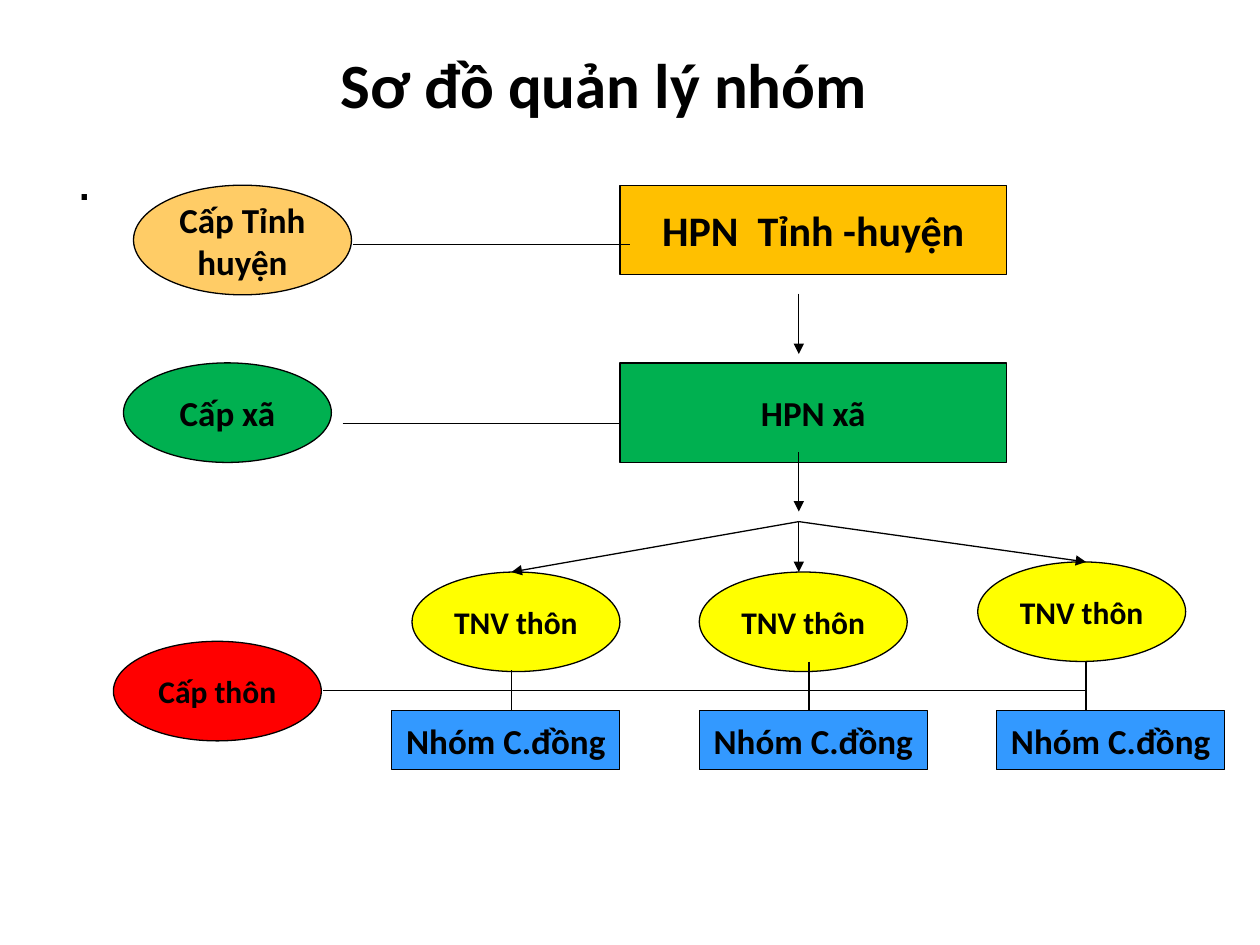
from lxml import etree
from pptx import Presentation
from pptx.dml.color import RGBColor
from pptx.enum.shapes import MSO_CONNECTOR, MSO_SHAPE
from pptx.enum.text import MSO_ANCHOR, PP_ALIGN
from pptx.oxml.ns import qn
from pptx.util import Inches, Pt

RECTANGLE = MSO_SHAPE.RECTANGLE
ELLIPSE = MSO_SHAPE.OVAL
STRAIGHT = MSO_CONNECTOR.STRAIGHT
MIDDLE, TOP = MSO_ANCHOR.MIDDLE, MSO_ANCHOR.TOP
CENTER, LEFT = PP_ALIGN.CENTER, PP_ALIGN.LEFT

BLACK = RGBColor(0x00, 0x00, 0x00)
BLUE = RGBColor(0x33, 0x99, 0xFF)
RED = RGBColor(0xFF, 0x00, 0x00)
YELLOW = RGBColor(0xFF, 0xFF, 0x00)
GREEN = RGBColor(0x00, 0xB0, 0x50)
PEACH = RGBColor(0xFF, 0xCC, 0x66)
AMBER = RGBColor(0xFF, 0xC0, 0x00)

NODE_WIDTH, NODE_HEIGHT = 1.65, 0.79
UNIT_LEFT, UNIT_WIDTH = 4.92, 3.07
GROUP_TOP = 5.64
TRUNK_X, FORK_Y = 6.34, 4.14
VILLAGES = [
    # group left, volunteer left, volunteer top, arrow x, link x, link top
]


def write_text(frame, text, size, font="Calibri", bold=True, align=CENTER):
    for index, line in enumerate(text.split("\n")):
        para = frame.paragraphs[0] if index == 0 else frame.add_paragraph()
        para.text = line
        para.alignment = align
        para.font.name = font
        para.font.size = Pt(size)
        para.font.bold = bold
        para.font.color.rgb = BLACK


def add_label(page, place, text, size, **style):
    box = page.shapes.add_textbox(*map(Inches, place))
    frame = box.text_frame
    frame.word_wrap = True
    frame.vertical_anchor = TOP
    frame.margin_top = Inches(0.08)
    write_text(frame, text, size, **style)


def add_node(page, kind, place, text, size, fill):
    node = page.shapes.add_shape(kind, *map(Inches, place))
    node.shadow.inherit = False
    node.fill.solid()
    node.fill.fore_color.rgb = fill
    node.line.color.rgb = BLACK
    node.line.width = Pt(0.75)
    frame = node.text_frame
    frame.word_wrap = False
    frame.vertical_anchor = MIDDLE
    write_text(frame, text, size)


def add_line(page, start, end, arrow=False):
    line = page.shapes.add_connector(STRAIGHT, *map(Inches, start + end))
    line.line.color.rgb = BLACK
    line.line.width = Pt(0.75)
    if arrow:
        outline = line.line._get_or_add_ln()
        etree.SubElement(outline, qn("a:tailEnd"), type="triangle")
    etree.SubElement(line._element.spPr, qn("a:effectLst"))


def add_levels(page):
    size = (NODE_WIDTH, NODE_HEIGHT)
    add_node(page, ELLIPSE, (0.9, 5.09, *size), "Cấp thôn", 18, RED)
    add_node(page, ELLIPSE, (0.98, 2.88, *size), "Cấp xã", 20, GREEN)
    add_node(page, ELLIPSE, (1.06, 1.47, 1.73, 0.87), "Cấp Tỉnh\nhuyện", 20, PEACH)


def add_units(page):
    add_node(page, RECTANGLE, (UNIT_LEFT, 2.88, UNIT_WIDTH, 0.79), "HPN xã", 20, GREEN)
    add_node(page, RECTANGLE, (UNIT_LEFT, 1.47, UNIT_WIDTH, 0.71),
             "HPN  Tỉnh -huyện", 24, AMBER)


def add_village(page, group_left, node_left, node_top, arrow_x, link_x, link_top):
    add_node(page, RECTANGLE, (group_left, GROUP_TOP, 1.81, 0.47),
             "Nhóm C.đồng", 20, BLUE)
    add_node(page, ELLIPSE, (node_left, node_top, NODE_WIDTH, NODE_HEIGHT),
             "TNV thôn", 18, YELLOW)
    add_line(page, (TRUNK_X, FORK_Y), (arrow_x, node_top), arrow=True)
    add_line(page, (link_x, link_top), (link_x, GROUP_TOP))


def main():
    deck = Presentation()
    deck.slide_width, deck.slide_height = Inches(10), Inches(7.5)
    page = deck.slides.add_slide(deck.slide_layouts[6])

    add_label(page, (0.35, 0.28, 9, 0.97), "Sơ đồ quản lý nhóm ", 36)
    add_label(page, (0.51, 1.07, 9.07, 4.96), ".", 32,
              font="Arial", bold=False, align=LEFT)
    add_levels(page)
    add_units(page)
    add_village(page, 3.11, 3.27, 4.54, 4.06, 4.06, 5.32)
    add_village(page, 5.55, 5.55, 4.54, TRUNK_X, 6.42, 5.25)
    add_village(page, 7.91, 7.76, 4.46, 8.62, 8.62, 5.25)

    for top, bottom in ((2.33, 2.81), (3.59, 4.06)):
        add_line(page, (TRUNK_X, top), (TRUNK_X, bottom), arrow=True)
    for left, right, y in ((2.8, 5, 1.94), (2.72, UNIT_LEFT, 3.36), (2.56, 8.62, 5.48)):
        add_line(page, (left, y), (right, y))

    deck.save("out.pptx")


if __name__ == "__main__":
    main()
